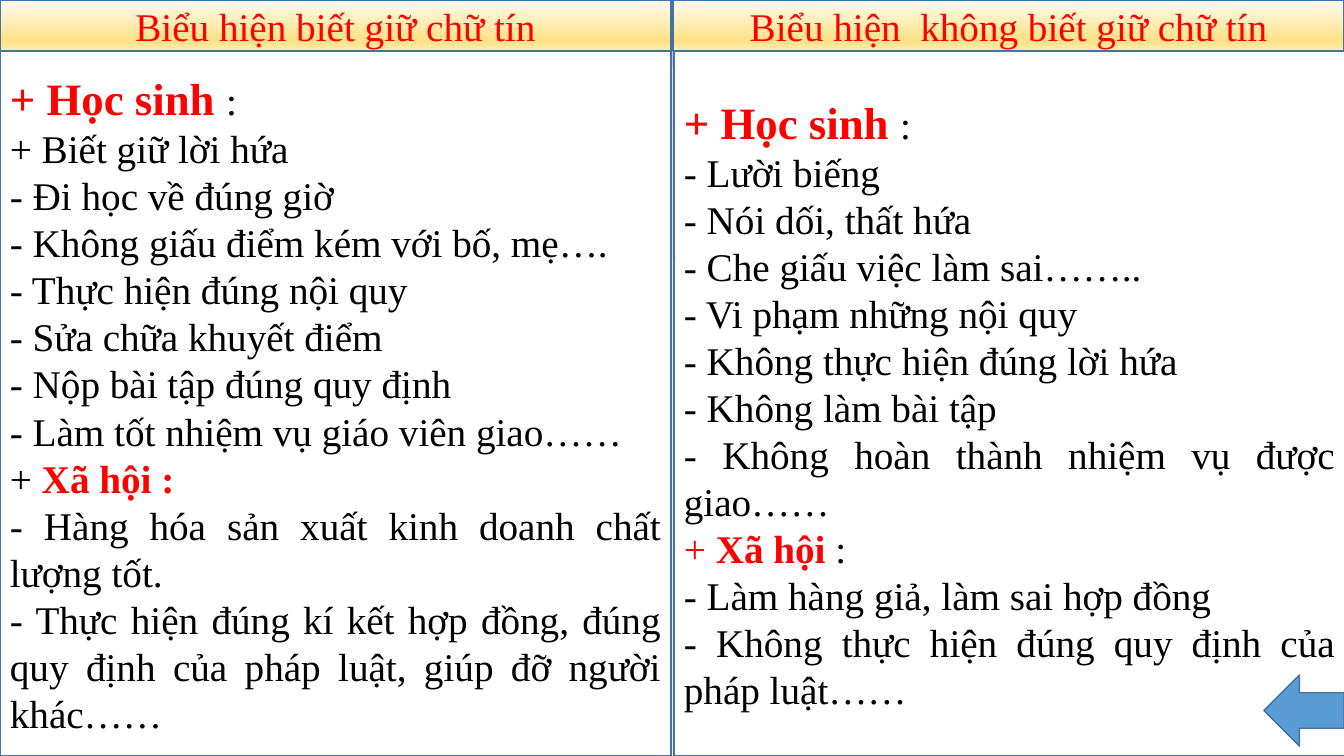
from lxml import etree
from pptx import Presentation
from pptx import util as u
from pptx.dml.color import RGBColor
from pptx.enum import shapes, text
from pptx.oxml import ns

COLORS = {
    "backdrop": "EDEDED", "panel": "FFFFFF", "accent": "5B9BD5",
    "border": "43739E", "heading": "FF0000", "body": "000000",
}
HEADER_STOPS = [(0, "FFFCF2"), (74, "FFE38C"), (83, "FFE38C"), (100, "FFECB2")]
FONT = "Times New Roman"
STYLES = {  # size, colour, bold
    "title": (28, "heading", False),
    "group": (32, "heading", True),
    "subgroup": (28, "heading", True),
    "mark": (28, "heading", False),
    "plain": (28, "body", False),
}
STUDENT = [("+ Học sinh ", "group"), (":", "plain")]

# A line is a plain string or a list of (wording, style) spans.
COLUMNS = [
    {"header_left": 0, "panel_left": 0,
     "title": "Biểu hiện biết giữ chữ tín",
     "lines": [
         STUDENT,
         "+ Biết giữ lời hứa",
         "- Đi học về đúng giờ",
         "- Không giấu điểm kém với bố, mẹ….",
         "- Thực hiện đúng nội quy",
         "- Sửa chữa khuyết điểm",
         "- Nộp bài tập đúng quy định",
         "- Làm tốt nhiệm vụ giáo viên giao……",
         [("+ ", "plain"), ("Xã hội :", "subgroup")],
         "- Hàng hóa sản xuất kinh doanh chất lượng tốt.",
         "- Thực hiện đúng kí kết hợp đồng, đúng quy định của pháp luật, "
         "giúp đỡ người khác……",
     ]},
    {"header_left": 673, "panel_left": 674,
     "title": "Biểu hiện  không biết giữ chữ tín",
     "lines": [
         STUDENT,
         "- Lười biếng",
         "- Nói dối, thất hứa",
         "- Che giấu việc làm sai……..",
         "- Vi phạm những nội quy",
         "- Không thực hiện đúng lời hứa",
         "- Không làm bài tập",
         "- Không hoàn thành nhiệm vụ được giao……",
         [("+ ", "mark"), ("Xã hội ", "subgroup"), (":", "plain")],
         "- Làm hàng giả, làm sai hợp đồng",
         "- Không thực hiện đúng quy định của pháp luật……",
     ]},
]
PAGE_W, PAGE_H = 1344, 756
COLUMN_W, HEADER_H = 671, 51
ARROW = (1264, 675, 80, 71)


def px(length):
    return u.Emu(round(length * 914400 / 100.8))


def color(name):
    return RGBColor.from_string(COLORS[name])


def add_box(page, kind, bounds, fill=None, border=True):
    box = page.shapes.add_shape(kind, *map(px, bounds))
    box.shadow.inherit = False
    if fill:
        box.fill.solid()
        box.fill.fore_color.rgb = color(fill)
    if border:
        box.line.color.rgb = color("border")
        box.line.width = u.Pt(1)
    else:
        box.line.fill.background()
    return box


def fill_header(box):
    """Give the box a top-to-bottom gradient with the header stops."""
    box.fill.gradient()
    box.fill.gradient_angle = 270
    stops = next(box.element.iter(ns.qn("a:gsLst")))
    for stop in list(stops):
        stops.remove(stop)
    for percent, value in HEADER_STOPS:
        stop = etree.SubElement(stops, ns.qn("a:gs"), pos=str(percent * 1000))
        etree.SubElement(stop, ns.qn("a:srgbClr"), val=value)


def write(box, lines, align):
    frame = box.text_frame
    frame.word_wrap = True
    frame.vertical_anchor = text.MSO_ANCHOR.MIDDLE
    for index, line in enumerate(lines):
        para = frame.add_paragraph() if index else frame.paragraphs[0]
        para.alignment = align
        spans = [(line, "plain")] if isinstance(line, str) else line
        for wording, style in spans:
            span = para.add_run()
            span.text = wording
            size, tint, bold = STYLES[style]
            span.font.name = FONT
            span.font.size = u.Pt(size)
            span.font.bold = bold
            span.font.color.rgb = color(tint)


def main():
    deck = Presentation()
    deck.slide_width, deck.slide_height = px(PAGE_W), px(PAGE_H)
    page = deck.slides.add_slide(deck.slide_layouts[6])
    rect = shapes.MSO_SHAPE.RECTANGLE

    add_box(page, rect, (0, 0, PAGE_W, PAGE_H), "backdrop", border=False)
    divider = page.shapes.add_connector(
        shapes.MSO_CONNECTOR.STRAIGHT, px(672), 0, px(671), px(PAGE_H))
    divider.line.color.rgb = color("accent")
    divider.line.width = u.Pt(0.5)
    etree.SubElement(divider.element.spPr, ns.qn("a:effectLst"))

    for column in COLUMNS:
        header = add_box(page, rect, (column["header_left"], 0, COLUMN_W, HEADER_H))
        fill_header(header)
        write(header, [[(column["title"], "title")]], text.PP_ALIGN.CENTER)
    for column in COLUMNS:
        panel = add_box(page, rect, (column["panel_left"], HEADER_H,
                                     COLUMN_W, PAGE_H - HEADER_H), "panel")
        write(panel, column["lines"], text.PP_ALIGN.JUSTIFY)

    add_box(page, shapes.MSO_SHAPE.LEFT_ARROW, ARROW, "accent")
    deck.save("out.pptx")


if __name__ == "__main__":
    main()
